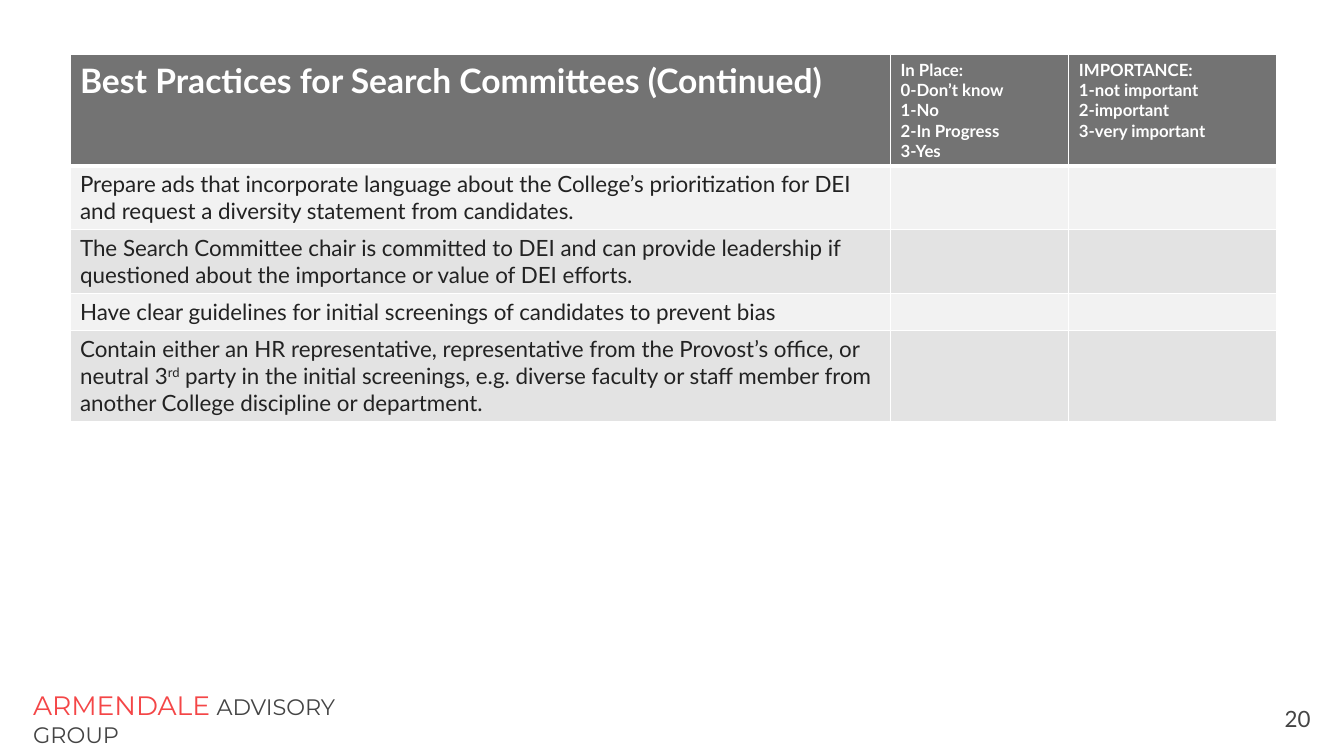
from lxml import etree
from pptx import Presentation
from pptx.dml.color import RGBColor
from pptx.enum.text import MSO_ANCHOR, PP_ALIGN
from pptx.oxml.ns import qn
from pptx.util import Pt

LEFT, RIGHT = PP_ALIGN.LEFT, PP_ALIGN.RIGHT
TOP, MIDDLE = MSO_ANCHOR.TOP, MSO_ANCHOR.MIDDLE

# Content
HEAD = [
    (24, ["Best Practices for Search Committees (Continued)"]),
    (12, ["In Place:", "0-Don’t know", "1-No", "2-In Progress", "3-Yes"]),
    (12, ["IMPORTANCE:", "1-not important", "2-important", "3-very important"]),
]
# Each practice is a list of runs; odd-numbered runs are raised
ITEMS = [
    ["Prepare ads that incorporate language about the College’s prioritization "
     "for DEI and request a diversity statement from candidates."],
    ["The Search Committee chair is committed to DEI and can provide leadership "
     "if questioned about the importance or value of DEI efforts."],
    ["Have clear guidelines for initial screenings of candidates to prevent bias"],
    ["Contain either an HR representative, representative from the Provost’s "
     "office, or neutral 3", "rd",
     " party in the initial screenings, e.g. diverse faculty or staff member "
     "from another College discipline or department."],
]
BRAND = [
    ("ARMENDALE", 19, "Montserrat", "red"),
    (" ", 18, "Lato", "gray"),
    ("ADVISORY GROUP", 16, "Montserrat", "gray"),
]
PAGE = [("20", 16, "Lato", "gray")]
COLORS = {
    "white": "FFFFFF", "head": "737373", "light": "F2F2F2", "dark": "E3E3E3",
    "ink": "222222", "gray": "444444", "red": "F44647",
}
COLS = [586.1, 127.4, 148.3]
ROWS = [79.2, 45.6, 45.6, 26.4, 64.8]
SIZE = 16


def rgb(name):
    return RGBColor.from_string(COLORS[name])


def add_run(para, text, size, face, color, bold=False):
    run = para.add_run()
    run.text = text
    font = run.font
    font.size, font.name, font.bold = Pt(size), face, bold
    font.color.rgb = rgb(color)
    return run


def add_text(slide, box, runs, align, anchor):
    frame = slide.shapes.add_textbox(*map(Pt, box)).text_frame
    frame.word_wrap = True
    frame.vertical_anchor = anchor
    para = frame.paragraphs[0]
    para.alignment = align
    for run in runs:
        add_run(para, *run)


def style(cell, color, low):
    """Draw white borders, with the given bottom width, then fill."""
    props = cell._tc.get_or_add_tcPr()
    for side, width in (("L", 1), ("R", 1), ("T", 1), ("B", low)):
        line = etree.SubElement(props, qn("a:ln" + side), w=str(Pt(width)))
        fill = etree.SubElement(line, qn("a:solidFill"))
        etree.SubElement(fill, qn("a:srgbClr"), val=COLORS["white"])
    cell.fill.solid()
    cell.fill.fore_color.rgb = rgb(color)


deck = Presentation()
deck.slide_width, deck.slide_height = Pt(960), Pt(540)
slide = deck.slides.add_slide(deck.slide_layouts[6])

# Footer
add_text(slide, (16.6, 488.9, 243.4, 36), BRAND, LEFT, TOP)
add_text(slide, (867.6, 499.7, 75.6, 26.6), PAGE, RIGHT, MIDDLE)

# Table grid
table = slide.shapes.add_table(
    len(ROWS), len(COLS), Pt(50), Pt(39.2), Pt(sum(COLS)), Pt(sum(ROWS))).table
for col, width in zip(table.columns, COLS):
    col.width = Pt(width)
for row, height in zip(table.rows, ROWS):
    row.height = Pt(height)

# Header row
for c, (size, lines) in enumerate(HEAD):
    cell = table.cell(0, c)
    style(cell, "head", 3)
    frame = cell.text_frame
    for i, line in enumerate(lines):
        para = frame.add_paragraph() if i else frame.paragraphs[0]
        add_run(para, line, size, "Lato", "white", True)

# Practice rows, with blank rating cells
for r, runs in enumerate(ITEMS, 1):
    for c in range(len(COLS)):
        cell = table.cell(r, c)
        style(cell, "light" if r % 2 else "dark", 1)
        if c:
            para = cell.text_frame.paragraphs[0]
            etree.SubElement(para._p, qn("a:endParaRPr"), sz=str(SIZE * 100))
    # The header's thick rule also tops the first practice row
    if r == 1:
        for c in range(len(COLS)):
            edge = table.cell(r, c)._tc.tcPr.find(qn("a:lnT"))
            edge.set("w", str(Pt(3)))
    para = table.cell(r, 0).text_frame.paragraphs[0]
    for i, text in enumerate(runs):
        run = add_run(para, text, SIZE, "Lato", "ink")
        if i % 2:
            run._r.get_or_add_rPr().set("baseline", "30000")

deck.save("out.pptx")
